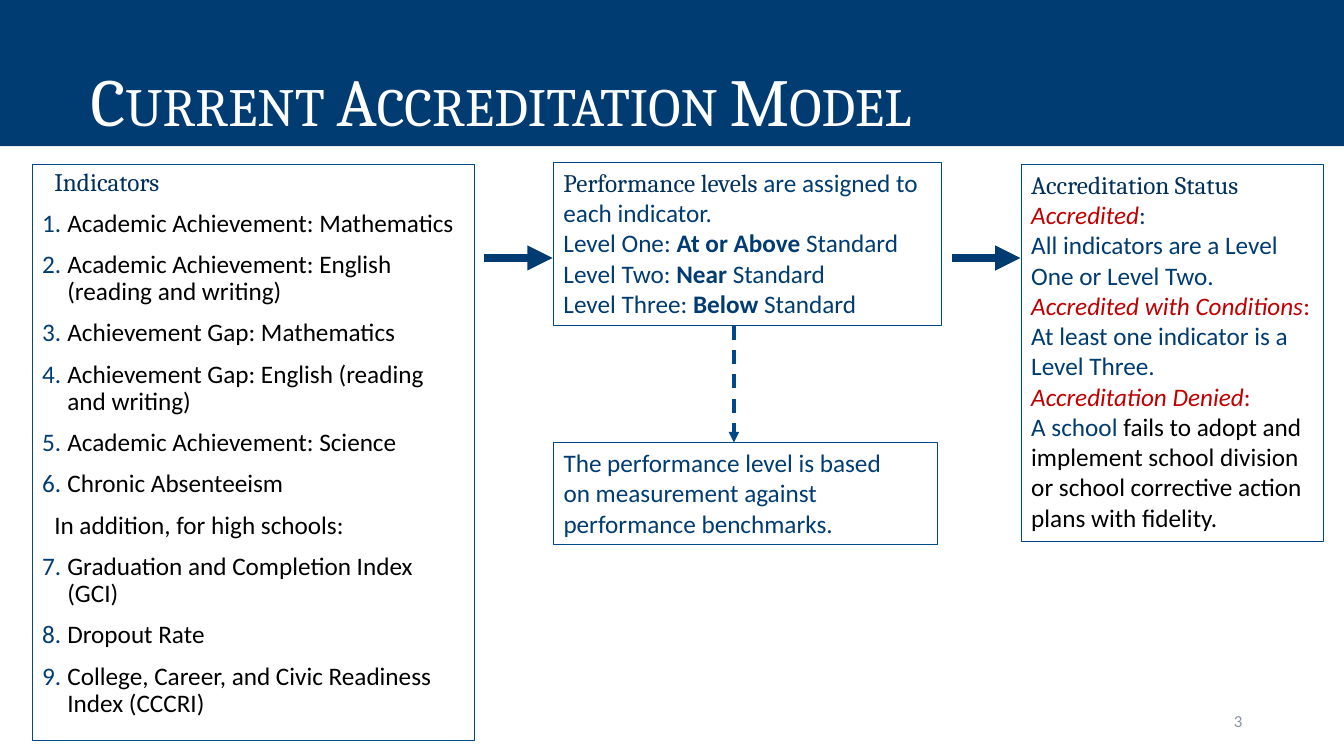
from dataclasses import dataclass

from lxml import etree
from pptx import Presentation
from pptx.dml.color import RGBColor
from pptx.enum.dml import MSO_LINE
from pptx.enum.shapes import MSO_CONNECTOR, MSO_SHAPE
from pptx.enum.text import MSO_ANCHOR, PP_ALIGN
from pptx.oxml.ns import qn
from pptx.util import Inches, Pt

RECTANGLE = MSO_SHAPE.RECTANGLE
STRAIGHT = MSO_CONNECTOR.STRAIGHT
DASH = MSO_LINE.DASH
TOP, MIDDLE, BOTTOM = MSO_ANCHOR.TOP, MSO_ANCHOR.MIDDLE, MSO_ANCHOR.BOTTOM
LEFT, RIGHT = PP_ALIGN.LEFT, PP_ALIGN.RIGHT
WIDTH, HEIGHT = Inches(13.33), Inches(7.5)


@dataclass(frozen=True)
class Theme:
    """Colours, fonts and type sizes of the slide."""
    navy: str = "003C71"
    heading: str = "00305B"
    outline: str = "014888"
    red: str = "C00000"
    black: str = "000000"
    white: str = "FFFFFF"
    grey: str = "8C92A5"
    serif: str = "Cambria"
    sans: str = "Calibri"
    title_size: int = 48
    body_size: int = 18
    number_size: int = 12


THEME = Theme()
STYLES = {
    "title": {"name": THEME.serif, "size": Pt(THEME.title_size), "color": THEME.white},
    "heading": {"name": THEME.serif, "color": THEME.heading},
    "body": {"color": THEME.navy},
    "strong": {"color": THEME.navy, "bold": True},
    "plain": {"color": THEME.black},
    "status": {"color": THEME.red, "italic": True},
    "colon": {"color": THEME.red},
    "number": {"size": Pt(THEME.number_size), "color": THEME.grey},
}
INDICATORS = [
    "Academic Achievement: Mathematics",
    "Academic Achievement: English (reading and writing)",
    "Achievement Gap: Mathematics",
    "Achievement Gap: English (reading and writing)",
    "Academic Achievement: Science",
    "Chronic Absenteeism",
]
HIGH_SCHOOL_INDICATORS = [
    "Graduation and Completion Index (GCI)",
    "Dropout Rate",
    "College, Career, and Civic Readiness Index (CCCRI)",
]
LEVELS = [("One", "At or Above"), ("Two", "Near"), ("Three", "Below")]
PERFORMANCE = [
    [("Performance levels ", "heading"), ("are assigned to each indicator.", "body")],
    *[[(f"Level {level}: ", "body"), (standard, "strong"), (" Standard", "body")]
      for level, standard in LEVELS],
]
BENCHMARKS = [
    [("The performance level is based", "body")],
    [("on measurement against performance benchmarks.", "body")],
]
STATUS = [
    [("Accreditation Status", "heading")],
    [("Accredited", "status"), (":", "body")],
    [("All indicators are a Level One or Level Two.", "body")],
    [("Accredited with Conditions", "status"), (": ", "colon"),
     ("At least one indicator is a Level Three.", "body")],
    [("Accreditation Denied", "status"), (":", "colon")],
    [("A school ", "body"),
     ("fails to adopt and implement school division or school corrective action "
      "plans with fidelity.", "plain")],
]


def across(percent):
    """Return a share of the slide's width."""
    return round(WIDTH * percent / 100)


def down(percent):
    """Return a share of the slide's height."""
    return round(HEIGHT * percent / 100)


def set_attributes(target, values):
    """Set each named attribute of the target."""
    for name, value in values.items():
        setattr(target, name, value)


def add_run(paragraph, text, style):
    """Add one run of text in a named style."""
    run = paragraph.add_run()
    run.text = text
    values = {"name": THEME.sans, "size": Pt(THEME.body_size),
              "bold": False, "italic": False, **STYLES[style]}
    run.font.color.rgb = RGBColor.from_string(values.pop("color"))
    set_attributes(run.font, values)
    return run


def fill_text(shape, paragraphs, anchor=TOP, align=LEFT):
    """Write paragraphs of styled runs into a shape."""
    frame = shape.text_frame
    set_attributes(frame, {"word_wrap": True, "vertical_anchor": anchor})
    for index, runs in enumerate(paragraphs):
        paragraph = frame.add_paragraph() if index else frame.paragraphs[0]
        paragraph.alignment = align
        for text, style in runs:
            add_run(paragraph, text, style)
    return frame


def add_box(slide, area, paragraphs, fill=None, anchor=TOP):
    """Add a rectangle that is either filled or outlined, with text."""
    left, top, width, height = area
    shape = slide.shapes.add_shape(
        RECTANGLE, across(left), down(top), across(width), down(height))
    shape.shadow.inherit = False
    if fill:
        shape.fill.solid()
        shape.fill.fore_color.rgb = RGBColor.from_string(fill)
        shape.line.fill.background()
    else:
        shape.fill.background()
        shape.line.color.rgb = RGBColor.from_string(THEME.outline)
        shape.line.width = Pt(0.75)
    return fill_text(shape, paragraphs, anchor)


def add_title(slide, text):
    """Add the title band with small capitals."""
    frame = add_box(slide, (0, 0, 100, 19.33), [[(text, "title")]], THEME.navy, BOTTOM)
    frame.margin_left = Inches(0.9)
    paragraph = frame.paragraphs[0]
    paragraph.line_spacing = 0.9
    paragraph.runs[0].font._element.set("cap", "small")


def set_indent(paragraph, margin, indent):
    """Set the left margin and first-line indent in inches."""
    properties = paragraph._p.get_or_add_pPr()
    properties.set("marL", str(Inches(margin)))
    properties.set("indent", str(Inches(indent)))
    return properties


def number_paragraph(paragraph, start):
    """Give a paragraph a coloured automatic number."""
    properties = set_indent(paragraph, 0.25, -0.25)
    colour = etree.SubElement(properties, qn("a:buClr"))
    etree.SubElement(colour, qn("a:srgbClr"), val=THEME.navy)
    etree.SubElement(properties, qn("a:buAutoNum"), type="arabicPeriod", startAt=str(start))


def add_indicators(slide, area):
    """Add the box with both numbered lists of indicators."""
    entries = [("Indicators", "heading", None)]
    entries += [(text, "plain", 1) for text in INDICATORS]
    entries += [("In addition, for high schools:", "plain", None)]
    entries += [(text, "plain", len(INDICATORS) + 1) for text in HIGH_SCHOOL_INDICATORS]
    frame = add_box(slide, area, [[(text, style)] for text, style, _ in entries])
    for paragraph, (_, _, start) in zip(frame.paragraphs, entries):
        set_attributes(paragraph, {"line_spacing": 0.9, "space_before": Pt(10)})
        if start:
            number_paragraph(paragraph, start)
        else:
            set_indent(paragraph, 0.12, 0)


def add_arrow(slide, begin, end, colour, width, dash=None):
    """Add a straight arrow between two points."""
    arrow = slide.shapes.add_connector(
        STRAIGHT, across(begin[0]), down(begin[1]), across(end[0]), down(end[1]))
    arrow.line.color.rgb = RGBColor.from_string(colour)
    set_attributes(arrow.line, {"width": Pt(width), "dash_style": dash})
    etree.SubElement(arrow.line._get_or_add_ln(), qn("a:tailEnd"), type="triangle")
    etree.SubElement(arrow._element.spPr, qn("a:effectLst"))


def add_page_number(slide, text):
    """Add the page number at the lower right."""
    box = slide.shapes.add_textbox(across(70.67), down(92.67), across(22.51), down(5.33))
    fill_text(box, [[(text, "number")]], MIDDLE, RIGHT)


def main():
    """Build and save the slide."""
    presentation = Presentation()
    set_attributes(presentation, {"slide_width": WIDTH, "slide_height": HEIGHT})
    slide = presentation.slides.add_slide(presentation.slide_layouts[6])
    add_title(slide, "Current Accreditation Model")
    add_indicators(slide, (2.4, 21.73, 32.93, 76.27))
    add_page_number(slide, "3")
    add_box(slide, (41.19, 21.47, 28.88, 21.6), PERFORMANCE)
    add_box(slide, (41.19, 58.53, 28.58, 13.47), BENCHMARKS)
    add_box(slide, (75.99, 21.73, 22.51, 49.87), STATUS)
    for start in (36.01, 70.82):
        add_arrow(slide, (start, 34.13), (start + 5.1, 34.13), THEME.navy, 6)
    add_arrow(slide, (54.61, 43.07), (54.61, 58.53), THEME.outline, 2.5, DASH)
    presentation.save("out.pptx")


if __name__ == "__main__":
    main()
